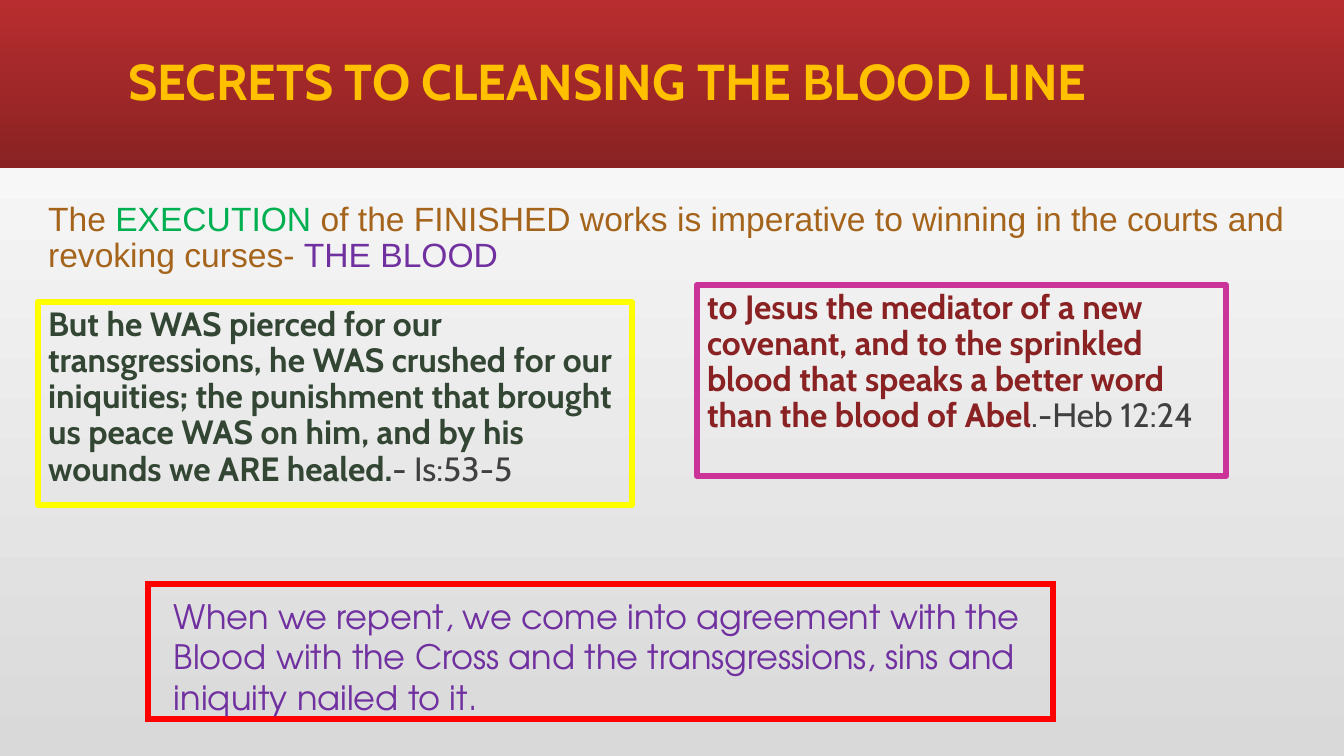
from lxml.etree import SubElement
from pptx import Presentation
from pptx.dml.color import RGBColor
from pptx.enum.shapes import MSO_SHAPE
from pptx.enum.text import MSO_ANCHOR, MSO_AUTO_SIZE, PP_ALIGN
from pptx.oxml.ns import qn
from pptx.util import Pt

PX = 12192000 / 1344
GOLD = RGBColor(0xFF, 0xC0, 0x00)
BROWN = RGBColor(0xA5, 0x64, 0x1B)
GREEN = RGBColor(0x00, 0xB0, 0x50)
PURPLE = RGBColor(0x70, 0x30, 0xA0)
FOREST = RGBColor(0x33, 0x46, 0x34)
CHARCOAL = RGBColor(0x40, 0x40, 0x40)
CRIMSON = RGBColor(0xB8, 0x2D, 0x2F)
MAROON = RGBColor(0x8A, 0x22, 0x23)
YELLOW = RGBColor(0xFF, 0xFF, 0x00)
MAGENTA = RGBColor(0xCC, 0x33, 0x99)
RED = RGBColor(0xFF, 0x00, 0x00)
SILVER = RGBColor(0xD9, 0xD9, 0xD9)
WHITE = RGBColor(0xFF, 0xFF, 0xFF)


class SlideBuilder:
    """Holds the current slide and its style, and places each kind of element."""

    def __init__(self, slide):
        self.slide = slide
        self.outline = Pt(4.5)
        self.body_size = 24

    def emu(self, box):
        return [round(length * PX) for length in box]

    def gradient(self, fill, start, end, angle):
        fill.gradient()
        fill.gradient_angle = angle
        for stop, colour in zip(fill.gradient_stops, (start, end)):
            stop.color.rgb = colour

    def border(self, shape, colour):
        shape.line.color.rgb = colour
        shape.line.width = self.outline

    def banner(self, box, start, end):
        band = self.slide.shapes.add_shape(MSO_SHAPE.RECTANGLE, *self.emu(box))
        band.shadow.inherit = False
        band.line.fill.background()
        self.gradient(band.fill, start, end, 270)
        self.slide.shapes._spTree.insert(2, band._element)

    def frame(self, box, colour):
        border = self.slide.shapes.add_shape(MSO_SHAPE.RECTANGLE, *self.emu(box))
        border.shadow.inherit = False
        border.fill.background()
        self.border(border, colour)
        SubElement(border.line._ln, qn("a:miter"), lim="800000")

    def fill_text(self, shape, runs, font, size, spacing=0.9, before=0,
                  anchor=MSO_ANCHOR.TOP):
        frame = shape.text_frame
        frame.word_wrap = True
        frame.auto_size = MSO_AUTO_SIZE.NONE
        frame.vertical_anchor = anchor
        paragraph = frame.paragraphs[0]
        paragraph.alignment = PP_ALIGN.LEFT
        paragraph.line_spacing = spacing
        paragraph.space_before = Pt(before)
        for text, colour, bold in runs:
            run = paragraph.add_run()
            run.text = text
            run.font.name = font
            run.font.size = Pt(size)
            run.font.bold = bold
            run.font.color.rgb = colour
        return paragraph

    def place(self, idx, box):
        holder = self.slide.placeholders[idx]
        holder.left, holder.top, holder.width, holder.height = self.emu(box)
        return holder

    def title(self, box, text, colour):
        self.fill_text(self.place(0, box), [(text, colour, True)], "Cabin", 36,
                       anchor=MSO_ANCHOR.MIDDLE)

    def body(self, idx, box, runs, font, anchor=MSO_ANCHOR.TOP, edge=None):
        holder = self.place(idx, box)
        paragraph = self.fill_text(holder, runs, font, self.body_size, before=18,
                                   anchor=anchor)
        properties = paragraph._p.get_or_add_pPr()
        properties.set("marL", "0")
        properties.set("indent", "0")
        SubElement(properties, qn("a:buNone"))
        if edge is not None:
            self.border(holder, edge)

    def text(self, box, runs, font):
        self.fill_text(self.slide.shapes.add_textbox(*self.emu(box)), runs, font,
                       self.body_size, spacing=1.0)

    def drop(self, idx):
        holder = self.slide.placeholders[idx]._element
        holder.getparent().remove(holder)


def main():
    deck = Presentation()
    deck.slide_width, deck.slide_height = round(1344 * PX), round(756 * PX)
    builder = SlideBuilder(deck.slides.add_slide(deck.slide_layouts[4]))
    builder.gradient(builder.slide.background.fill, SILVER, WHITE, 90)
    builder.banner((0, 0, 1344, 168), CRIMSON, MAROON)
    builder.title((118, 11, 1109, 146), "SECRETS TO CLEANSING THE BLOOD LINE", GOLD)
    builder.body(1, (38, 197, 1261, 83), [
        ("The ", BROWN, False),
        ("EXECUTION", GREEN, False),
        (" of the FINISHED works is imperative to winning in the courts and "
         "revoking curses- ", BROWN, False),
        ("THE BLOOD", PURPLE, False),
    ], "Arial", MSO_ANCHOR.MIDDLE)
    builder.body(2, (38, 302, 594, 203), [
        ("But he WAS pierced for our transgressions, he WAS crushed for our "
         "iniquities; the punishment that brought us peace WAS on him, and by "
         "his wounds we ARE healed.", FOREST, True),
        ("- Is:53-5", CHARCOAL, False),
    ], "Cabin", edge=YELLOW)
    builder.body(4, (697, 285, 529, 191), [
        ("to Jesus the mediator of a new covenant, and to the sprinkled blood "
         "that speaks a better word than the blood of Abel", MAROON, True),
        (".-Heb 12:24", CHARCOAL, False),
    ], "Cabin", edge=MAGENTA)
    builder.drop(3)
    builder.frame((148, 584, 905, 135), RED)
    builder.text((164, 591, 873, 132), [
        ("When we repent, we come into agreement with the Blood with the Cross "
         "and the transgressions, sins and iniquity nailed to it.", PURPLE, False),
    ], "TeX Gyre Adventor")
    deck.save("out.pptx")


if __name__ == "__main__":
    main()
